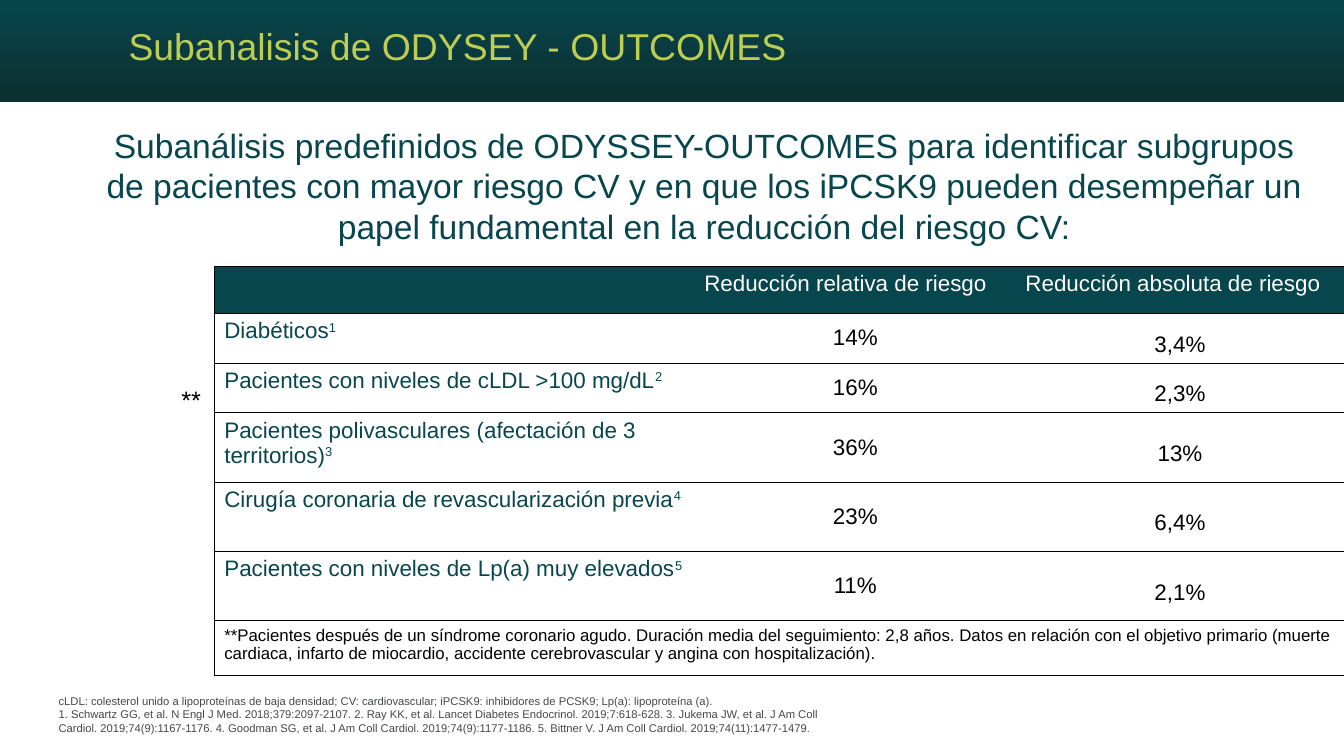
from lxml import etree
from pptx import Presentation
from pptx.dml.color import RGBColor
from pptx.enum.shapes import MSO_SHAPE
from pptx.enum.text import MSO_ANCHOR, PP_ALIGN
from pptx.oxml.ns import qn
from pptx.util import Cm, Pt

COLOURS = {
    "teal": "08464E",
    "dark": "0C2F2F",
    "lime": "BDCD51",
    "grey": "464748",
    "black": "000000",
    "white": "FFFFFF",
}
COLUMN_WIDTHS = [9.07, 6.07, 6.2]
ROW_HEIGHTS = [0.89, 0.94, 0.94, 1.31, 1.31, 1.31, 1.04]
HEADINGS = ["", "Reducción relativa de riesgo", "Reducción absoluta de riesgo"]
SUBGROUPS = [
    ("Diabéticos", "14%", "3,4%"),
    ("Pacientes con niveles de cLDL >100 mg/dL", "16%", "2,3%"),
    ("Pacientes polivasculares (afectación de 3 territorios)", "36%", "13%"),
    ("Cirugía coronaria de revascularización previa", "23%", "6,4%"),
    ("Pacientes con niveles de Lp(a) muy elevados", "11%", "2,1%"),
]
TABLE_NOTE = (
    "**Pacientes después de un síndrome coronario agudo. Duración media del "
    "seguimiento: 2,8 años. Datos en relación con el objetivo primario (muerte "
    "cardiaca, infarto de miocardio, accidente cerebrovascular y angina con "
    "hospitalización)."
)
INTRODUCTION = (
    "Subanálisis predefinidos de ODYSSEY-OUTCOMES para identificar subgrupos de "
    "pacientes con mayor riesgo CV y en que los iPCSK9 pueden desempeñar un papel "
    "fundamental en la reducción del riesgo CV:"
)
REFERENCES = (
    "cLDL: colesterol unido a lipoproteínas de baja densidad; CV: cardiovascular; "
    "iPCSK9: inhibidores de PCSK9; Lp(a): lipoproteína (a).\n"
    "1. Schwartz GG, et al. N Engl J Med. 2018;379:2097-2107. "
    "2. Ray KK, et al. Lancet Diabetes Endocrinol. 2019;7:618-628. "
    "3. Jukema JW, et al. J Am Coll Cardiol. 2019;74(9):1167-1176. "
    "4. Goodman SG, et al. J Am Coll Cardiol. 2019;74(9):1177-1186. "
    "5. Bittner V. J Am Coll Cardiol. 2019;74(11):1477-1479."
)


class SlideBuilder:
    font_name = "Arial"

    def __init__(self, slide):
        self.slide = slide

    def colour(self, name):
        return RGBColor.from_string(COLOURS[name])

    def style(self, text_frame, size, colour, align=PP_ALIGN.LEFT, spacing=None):
        for paragraph in text_frame.paragraphs:
            paragraph.alignment = align
            paragraph.line_spacing = spacing
            paragraph.font.size = Pt(size)
            for run in paragraph.runs:
                run.font.name = self.font_name
                run.font.size = Pt(size)
                run.font.color.rgb = self.colour(colour)

    def band(self, left, top, width, height):
        shape = self.slide.shapes.add_shape(
            MSO_SHAPE.RECTANGLE, Cm(left), Cm(top), Cm(width), Cm(height))
        shape.shadow.inherit = False
        shape.line.fill.background()
        shape.fill.gradient()
        shape.fill.gradient_angle = 270
        for stop, name in zip(shape.fill.gradient_stops, ("teal", "dark")):
            stop.color.rgb = self.colour(name)

    def text(self, box, content, size, colour, wrap=True,
             anchor=MSO_ANCHOR.TOP, **paragraph_style):
        shape = self.slide.shapes.add_textbox(*map(Cm, box))
        text_frame = shape.text_frame
        text_frame.word_wrap = wrap
        text_frame.vertical_anchor = anchor
        text_frame.text = content
        self.style(text_frame, size, colour, **paragraph_style)

    def table(self, left, top, widths, heights):
        table = self.slide.shapes.add_table(
            len(heights), len(widths), Cm(left), Cm(top),
            Cm(sum(widths)), Cm(sum(heights))).table
        table.first_row = table.horz_banding = False
        for column, width in zip(table.columns, widths):
            column.width = Cm(width)
        for row, height in zip(table.rows, heights):
            row.height = Cm(height)
            for index, cell in enumerate(row.cells):
                cell.margin_left = cell.margin_right = Cm(0.18)
                cell.margin_top = cell.margin_bottom = Cm(0.1)
                cell.fill.background()
                self.borders(cell, index == 0, index == len(widths) - 1)
        return table

    def borders(self, cell, left, right):
        """Rule the top and bottom of a cell, and its sides where asked."""
        properties = cell._tc.get_or_add_tcPr()
        sides = {"a:lnL": left, "a:lnR": right, "a:lnT": True, "a:lnB": True}
        for position, (tag, visible) in enumerate(sides.items()):
            line = etree.Element(qn(tag), w=str(Pt(0.5)))
            if visible:
                fill = etree.SubElement(line, qn("a:solidFill"))
                etree.SubElement(fill, qn("a:srgbClr"), val=COLOURS["black"])
            else:
                etree.SubElement(line, qn("a:noFill"))
            properties.insert(position, line)

    def cell(self, cell, content, size, colour, fill=None,
             anchor=MSO_ANCHOR.TOP, superscript=None, **paragraph_style):
        cell.text_frame.text = content
        cell.vertical_anchor = anchor
        if superscript:
            run = cell.text_frame.paragraphs[0].add_run()
            run.text = superscript
            run.font._element.set("baseline", "30000")
        if fill:
            cell.fill.solid()
            cell.fill.fore_color.rgb = self.colour(fill)
        self.style(cell.text_frame, size, colour, **paragraph_style)


def main():
    presentation = Presentation()
    presentation.slide_width = Cm(25.4)
    presentation.slide_height = Cm(14.29)
    builder = SlideBuilder(
        presentation.slides.add_slide(presentation.slide_layouts[6]))

    builder.band(0, 0, 25.4, 1.93)

    table = builder.table(4.06, 5.03, COLUMN_WIDTHS, ROW_HEIGHTS)
    for column, heading in enumerate(HEADINGS):
        builder.cell(table.cell(0, column), heading, 12, "white", fill="teal")
    for row, (subgroup, relative, absolute) in enumerate(SUBGROUPS, start=1):
        builder.cell(table.cell(row, 0), subgroup, 12, "teal", superscript=str(row))
        for column, value, spacing in ((1, relative, None), (2, absolute, 1.5)):
            builder.cell(table.cell(row, column), value, 12, "black",
                         anchor=MSO_ANCHOR.MIDDLE, align=PP_ALIGN.CENTER,
                         spacing=spacing)
    last_row = len(ROW_HEIGHTS) - 1
    note_cell = table.cell(last_row, 0)
    note_cell.merge(table.cell(last_row, len(COLUMN_WIDTHS) - 1))
    for line in note_cell._tc.tcPr.findall(qn("a:lnR")):
        note_cell._tc.tcPr.remove(line)
    builder.borders(note_cell, True, True)
    for line in note_cell._tc.tcPr.findall(qn("a:lnL"))[1:]:
        note_cell._tc.tcPr.remove(line)
    for tag in ("a:lnT", "a:lnB"):
        for line in note_cell._tc.tcPr.findall(qn(tag))[1:]:
            note_cell._tc.tcPr.remove(line)
    builder.cell(note_cell, TABLE_NOTE, 9, "black")

    builder.text((0.86, 13, 15.42, 0.97), REFERENCES, 6, "grey")
    builder.text((2.18, 0, 19.18, 1.85), "Subanalisis de ODYSEY - OUTCOMES",
                 20, "lime", anchor=MSO_ANCHOR.MIDDLE, spacing=0.9)
    builder.text((1.5, 2.24, 23.62, 2.57), INTRODUCTION, 18, "teal",
                 align=PP_ALIGN.CENTER)
    builder.text((3.18, 7.14, 0.89, 0.84), "**", 13.5, "black", wrap=False)

    presentation.save("out.pptx")


if __name__ == "__main__":
    main()
